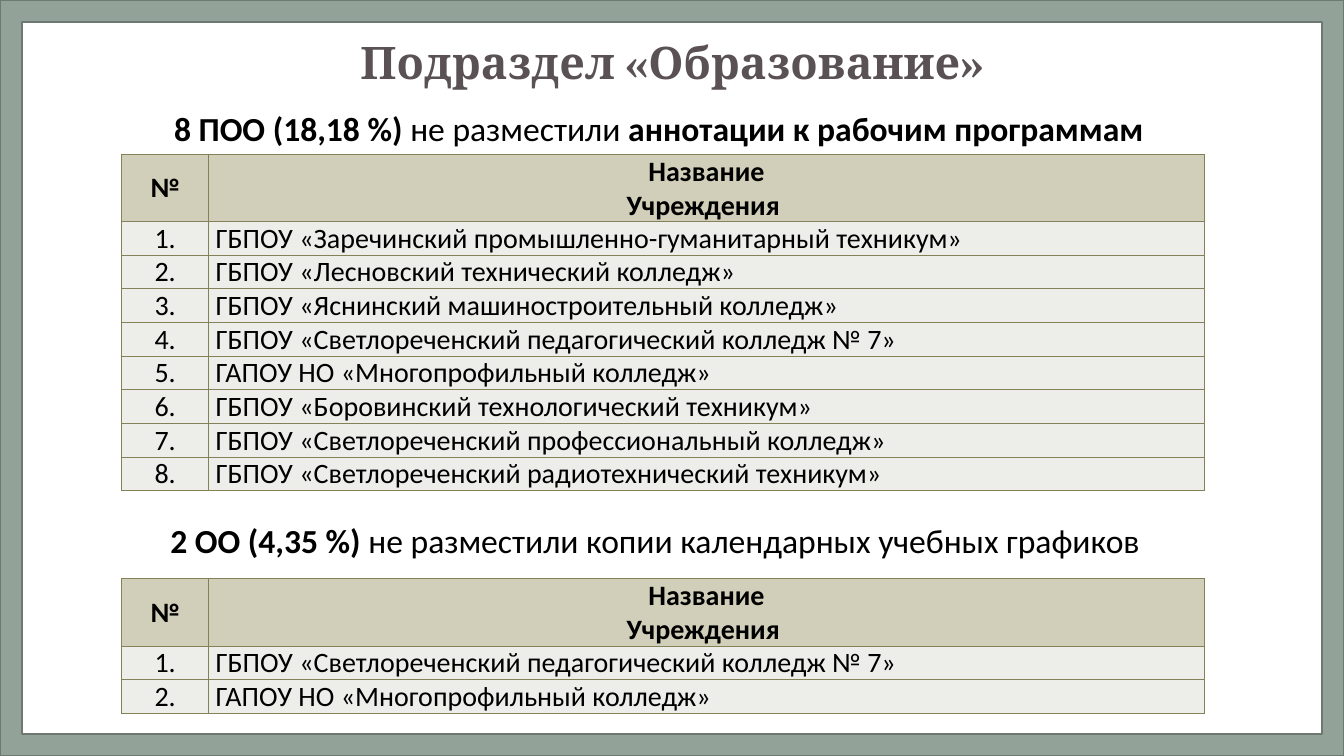
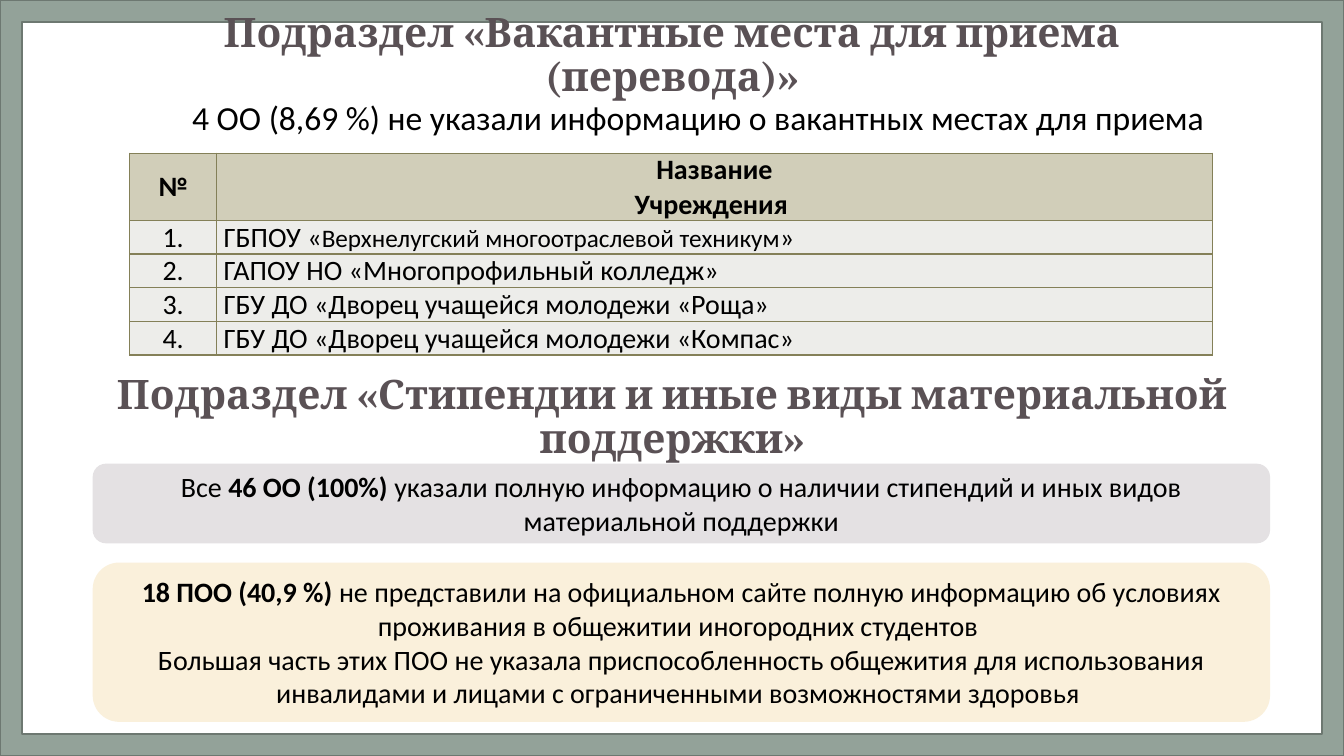
"""Build two slides on missing information in the sections of college websites."""
from lxml import etree
from pptx import Presentation
from pptx.dml.color import RGBColor
from pptx.enum.shapes import MSO_SHAPE
from pptx.enum.text import MSO_ANCHOR, PP_ALIGN
from pptx.util import Pt

CENTER, LEFT = PP_ALIGN.CENTER, PP_ALIGN.LEFT
MIDDLE, TOP = MSO_ANCHOR.MIDDLE, MSO_ANCHOR.TOP
FRAME, ROUNDED = MSO_SHAPE.FRAME, MSO_SHAPE.ROUNDED_RECTANGLE
NS = "{http://schemas.openxmlformats.org/drawingml/2006/main}"
BLACK, HEADING = "000000", "5A5155"
FRAME_FILL, FRAME_LINE = "93A299", "6D7871"
HEAD_FILL, ROW_FILL, BORDER = "D1CEB9", "EDEDEA", "848058"
HEAD_H, ROW_H, NUM_W, NAME_W = 48, 24, 62, 711.3


def rgb(value):
    return RGBColor.from_string(value)


def write(tf, text, size, font="Calibri", color=BLACK, align=CENTER, spacing=1.0):
    tf.word_wrap = True
    for i, line in enumerate(text.split("\n")):
        p = tf.paragraphs[0] if i == 0 else tf.add_paragraph()
        p.alignment = align
        p.line_spacing = spacing
        for j, part in enumerate(line.split("*")):
            if part:
                r = p.add_run()
                r.text = part
                r.font.name = font
                r.font.size = Pt(size)
                r.font.bold = j % 2 == 1
                r.font.color.rgb = rgb(color)


prs = Presentation()
prs.slide_width, prs.slide_height = Pt(960), Pt(540)
layout = prs.slide_layouts[5]
first, second = [prs.slides.add_slide(layout) for _ in range(2)]

frame = first.shapes.add_shape(FRAME, 0, 0, prs.slide_width, prs.slide_height)
frame.adjustments[0] = 0.029
frame.shadow.inherit = False
frame.fill.solid()
frame.fill.fore_color.rgb = rgb(FRAME_FILL)
frame.line.color.rgb = rgb(FRAME_LINE)
frame.line.width = Pt(1)
layout.shapes.element.insert(2, frame.element)

headings = [
    (first.shapes.title, 17.3, 57.6, 32, "*Подраздел «Образование»*"),
    (second.shapes.title, 11.5, 57.6, 29, "*Подраздел «Вакантные места для приема (перевода)»*"),
    (second.shapes.add_textbox(0, 0, 0, 0), 260, 77.8, 29,
     "*Подраздел «Стипендии и иные виды материальной поддержки»*"),
]
for sp, top, height, size, text in headings:
    sp.left, sp.top, sp.width, sp.height = Pt(66.2), Pt(top), Pt(828), Pt(height)
    sp.text_frame.vertical_anchor = MIDDLE
    write(sp.text_frame, text, size, "Cambria", HEADING, spacing=0.9)

captions = [
    (first, 53.3, 73.4, "*8 ПОО (18,18 %) *не разместили *аннотации к рабочим программам *"),
    (first, 48, 367.5, "*2 ОО (4,35 %) *не разместили копии календарных учебных графиков"),
    (second, 81.4, 65.5, "4 ОО (8,69 %) не указали информацию о вакантных местах для приема "),
]
for s, left, top, text in captions:
    sp = s.shapes.add_textbox(Pt(left), Pt(top), Pt(840), Pt(36))
    write(sp.text_frame, text, 24)

tables = [
    (first, 87, 110.2, [
        "ГБПОУ «Заречинский промышленно-гуманитарный техникум»",
        "ГБПОУ «Лесновский технический колледж»",
        "ГБПОУ «Яснинский машиностроительный колледж»",
        "ГБПОУ «Светлореченский педагогический колледж № 7»",
        "ГАПОУ НО «Многопрофильный колледж»",
        "ГБПОУ «Боровинский технологический техникум»",
        "ГБПОУ «Светлореченский профессиональный колледж»",
        "ГБПОУ «Светлореченский радиотехнический техникум»",
    ]),
    (first, 87, 413.5, [
        "ГБПОУ «Светлореченский педагогический колледж № 7»",
        "ГАПОУ НО «Многопрофильный колледж»",
    ]),
    (second, 92.7, 109.4, [
        "ГБПОУ «*Верхнелугский многоотраслевой техникум*»",
        "ГАПОУ НО «Многопрофильный колледж»",
        "ГБУ ДО «Дворец учащейся молодежи «Роща»",
        "ГБУ ДО «Дворец учащейся молодежи «Компас»",
    ]),
]
for s, left, top, names in tables:
    rows = [("*№*", "*Название*\n*Учреждения *")]
    rows += [(f"{n}.", name) for n, name in enumerate(names, 1)]
    height = HEAD_H + ROW_H * len(names)
    table = s.shapes.add_table(len(rows), 2, Pt(left), Pt(top), Pt(NUM_W + NAME_W), Pt(height)).table
    table.horz_banding = False
    table.columns[0].width, table.columns[1].width = Pt(NUM_W), Pt(NAME_W)
    for i, row in enumerate(rows):
        head = i == 0
        table.rows[i].height = Pt(HEAD_H if head else ROW_H)
        for j, text in enumerate(row):
            cell = table.cell(i, j)
            cell.margin_left = cell.margin_right = Pt(4.3 if head else 5)
            cell.margin_top = cell.margin_bottom = 0
            cell.vertical_anchor = MIDDLE if head else TOP
            write(cell.text_frame, text, 20, align=CENTER if head or j == 0 else LEFT)
            tc_pr = cell._tc.get_or_add_tcPr()
            for side in ("lnL", "lnR", "lnT", "lnB"):
                ln = etree.SubElement(tc_pr, NS + side, w=str(Pt(1)))
                etree.SubElement(etree.SubElement(ln, NS + "solidFill"), NS + "srgbClr", val=BORDER)
            cell.fill.solid()
            cell.fill.fore_color.rgb = rgb(HEAD_FILL if head else ROW_FILL)

small = table.cell(1, 1).text_frame.paragraphs[0].runs[1].font
small.size, small.bold = Pt(18), False

panels = [
    (331.2, 56.9, "E4E1E3",
     "Все *46 ОО (100%) *указали полную информацию о наличии стипендий и иных видов "
     "материальной поддержки"),
    (401.8, 113.8, "FAF0DB",
     "*18 ПОО (40,9 %) *не представили на официальном сайте полную информацию об условиях "
     "проживания в общежитии иногородних студентов \n"
     "Большая часть этих ПОО не указала приспособленность общежития для использования "
     "инвалидами и лицами с ограниченными возможностями здоровья "),
]
for top, height, fill, text in panels:
    sp = second.shapes.add_shape(ROUNDED, Pt(66.2), Pt(top), Pt(841), Pt(height))
    sp.shadow.inherit = False
    sp.fill.solid()
    sp.fill.fore_color.rgb = rgb(fill)
    sp.line.fill.background()
    sp.text_frame.vertical_anchor = MIDDLE
    write(sp.text_frame, text, 20)

prs.save("out.pptx")
